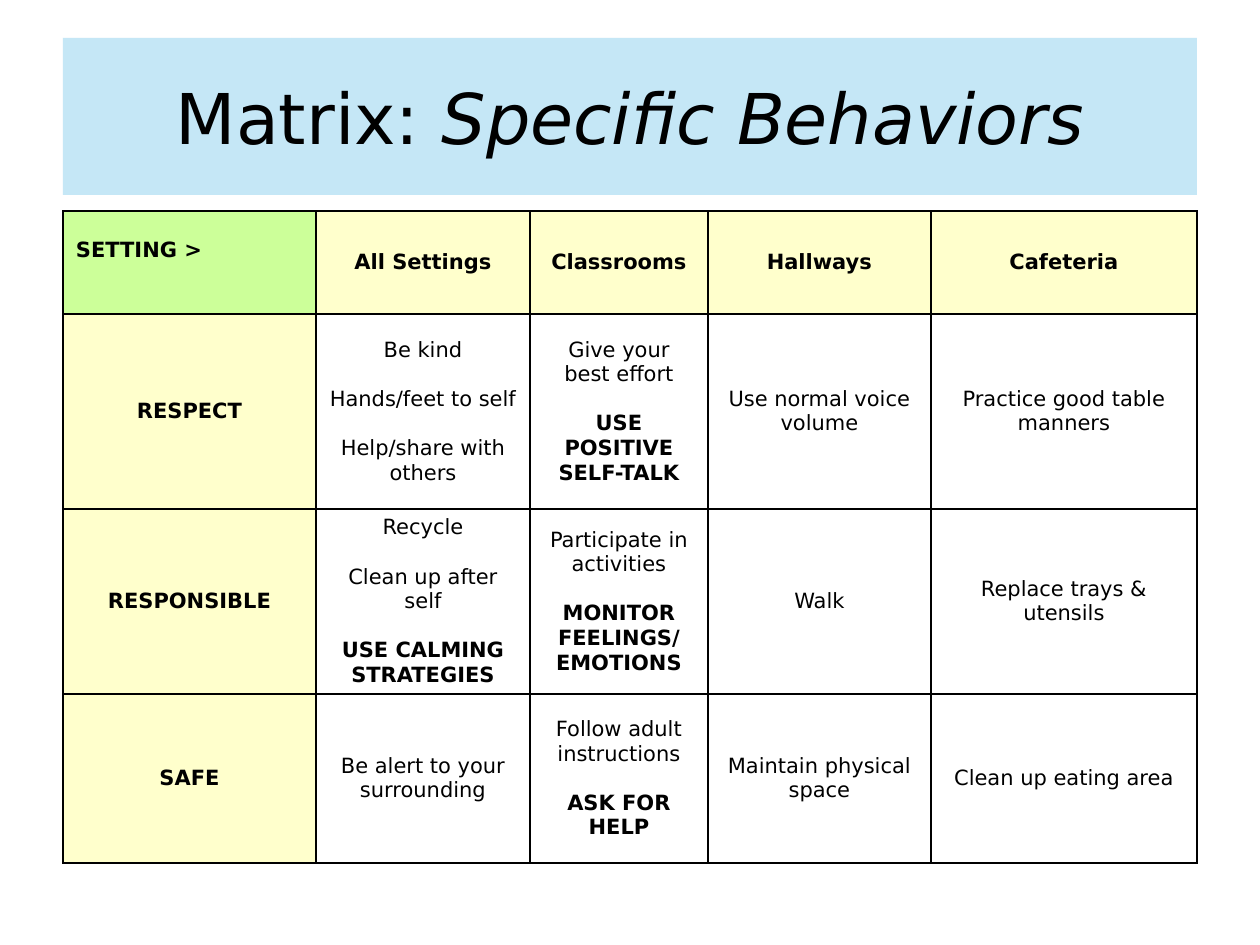
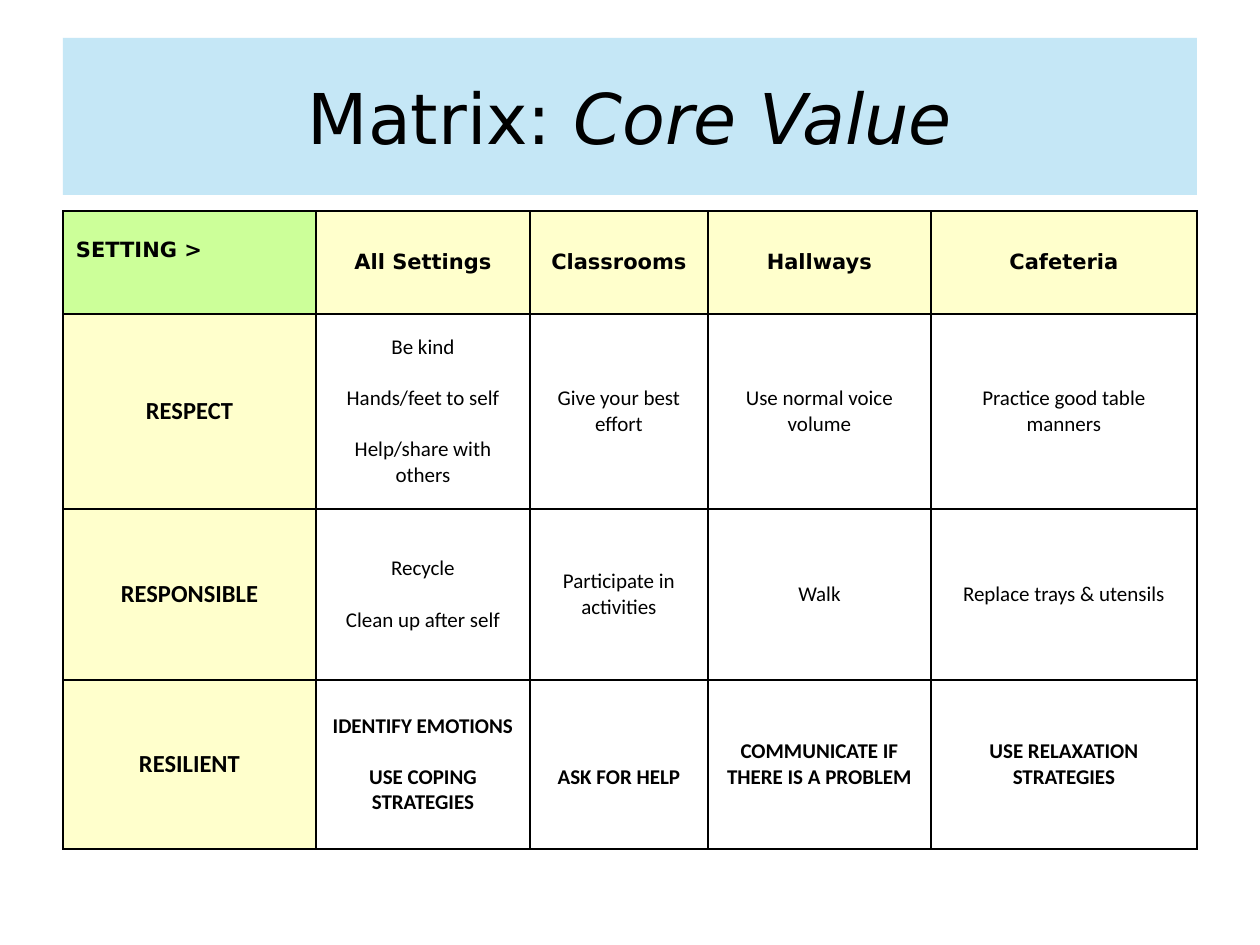
import pptx
import pptx.dml.color
import pptx.enum.shapes
import pptx.enum.text
import pptx.oxml
import pptx.oxml.ns
import pptx.util
from lxml import etree

EMU_PER_PX = 914400 / 126
LEFT, WIDTH = 63, 1134
TITLE_TOP, TITLE_HEIGHT = 38, 157
TABLE_TOP = 211
COLUMN_WIDTHS = [253, 214, 178, 223, 266]
MARGIN_X, MARGIN_Y = 13, 6

BLACK, WHITE = "000000", "FFFFFF"
SKY, GREEN, CREAM = "A9DCF2", "CCFF99", "FFFFCC"
SKY_ALPHA = 67
BASE_FONT = "DejaVu Sans"
SETTINGS = ["SETTING >", "All Settings", "Classrooms", "Hallways", "Cafeteria"]
ALIGN = pptx.enum.text.PP_ALIGN
MIDDLE = pptx.enum.text.MSO_ANCHOR.MIDDLE

BEHAVIORS = [
    ["RESPECT",
     ["Be kind", "Hands/feet to self", "Help/share with others"],
     ["Give your best effort", "USE POSITIVE SELF-TALK"],
     ["Use normal voice volume"],
     ["Practice good table manners"]],
    ["RESPONSIBLE",
     ["Recycle", "Clean up after self", "USE CALMING STRATEGIES"],
     ["Participate in activities", "MONITOR FEELINGS/ EMOTIONS"],
     ["Walk"],
     ["Replace trays & utensils"]],
    ["SAFE",
     ["Be alert to your surrounding"],
     ["Follow adult instructions", "ASK FOR HELP"],
     ["Maintain physical space"],
     ["Clean up eating area"]],
]

CORE_VALUES = [
    ["RESPECT",
     ["Be kind", "Hands/feet to self", "Help/share with others"],
     ["Give your best effort"],
     ["Use normal voice volume"],
     ["Practice good table manners"]],
    ["RESPONSIBLE",
     ["Recycle", "Clean up after self"],
     ["Participate in activities"],
     ["Walk"],
     ["Replace trays & utensils"]],
    ["RESILIENT",
     ["IDENTIFY EMOTIONS", "USE COPING STRATEGIES"],
     ["ASK FOR HELP"],
     ["COMMUNICATE IF THERE IS A PROBLEM"],
     ["USE RELAXATION STRATEGIES"]],
]


def px(length):
    return pptx.util.Emu(round(length * EMU_PER_PX))


def color(value):
    return pptx.dml.color.RGBColor.from_string(value)


def fill_solid(target, value):
    target.fill.solid()
    target.fill.fore_color.rgb = color(value)


def add_run(paragraph, text, size, font_name=BASE_FONT, bold=False, italic=False):
    run = paragraph.add_run()
    run.text = text
    run.font.name = font_name
    run.font.size = pptx.util.Pt(size)
    run.font.bold = bold
    run.font.italic = italic
    run.font.color.rgb = color(BLACK)


def set_margins(target):
    target.margin_left = target.margin_right = px(MARGIN_X)
    target.margin_top = target.margin_bottom = px(MARGIN_Y)
    target.vertical_anchor = MIDDLE


def add_title(slide, topic):
    band = slide.shapes.add_shape(
        pptx.enum.shapes.MSO_SHAPE.RECTANGLE,
        px(LEFT), px(TITLE_TOP), px(WIDTH), px(TITLE_HEIGHT))
    band.shadow.inherit = False
    band.line.fill.background()
    fill_solid(band, SKY)
    sky = band.fill._xPr.find(".//" + pptx.oxml.ns.qn("a:srgbClr"))
    alpha = etree.SubElement(sky, pptx.oxml.ns.qn("a:alpha"))
    alpha.set("val", str(SKY_ALPHA * 1000))
    frame = band.text_frame
    frame.word_wrap = True
    set_margins(frame)
    paragraph = frame.paragraphs[0]
    paragraph.alignment = ALIGN.CENTER
    add_run(paragraph, "Matrix: ", 40)
    add_run(paragraph, topic, 40, italic=True)


def add_borders(cell):
    properties = cell._tc.get_or_add_tcPr()
    for index, side in enumerate(["lnL", "lnR", "lnT", "lnB"]):
        border = pptx.oxml.parse_xml(
            f'<a:{side} {pptx.oxml.ns.nsdecls("a")} w="12700"><a:solidFill>'
            f'<a:srgbClr val="{BLACK}"/></a:solidFill></a:{side}>')
        properties.insert(index, border)


def fill_cell(cell, lines, fill, size, font_name, bold=False, gap=14):
    fill_solid(cell, fill)
    add_borders(cell)
    set_margins(cell)
    for index, line in enumerate(lines):
        if index == 0:
            paragraph = cell.text_frame.paragraphs[0]
        else:
            paragraph = cell.text_frame.add_paragraph()
            paragraph.space_before = pptx.util.Pt(gap)
        paragraph.alignment = ALIGN.CENTER
        add_run(paragraph, line, size, font_name, bold or line.isupper())


def add_matrix(slide, values, row_heights, font_name, value_size, gap):
    frame = slide.shapes.add_table(
        len(row_heights), len(COLUMN_WIDTHS),
        px(LEFT), px(TABLE_TOP), px(WIDTH), px(sum(row_heights)))
    table = frame.table
    table.first_row = False
    table.horz_banding = False
    for column, width in zip(table.columns, COLUMN_WIDTHS):
        column.width = px(width)
    for row, height in zip(table.rows, row_heights):
        row.height = px(height)

    for column, setting in enumerate(SETTINGS):
        fill = CREAM if column else GREEN
        fill_cell(table.cell(0, column), [setting], fill, 12, BASE_FONT, bold=True)
    corner = table.cell(0, 0)
    corner.text_frame.paragraphs[0].alignment = ALIGN.LEFT
    corner.margin_bottom = px(MARGIN_Y + 25)

    for row, (value, *behaviors) in enumerate(values, 1):
        fill_cell(table.cell(row, 0), [value], CREAM, value_size, font_name)
        for column, lines in enumerate(behaviors, 1):
            fill_cell(table.cell(row, column), lines, WHITE, 12, font_name, gap=gap)
    return table


def add_matrix_slide(presentation, topic, *matrix):
    slide = presentation.slides.add_slide(presentation.slide_layouts[6])
    table = add_matrix(slide, *matrix)
    add_title(slide, topic)
    return table


def main():
    presentation = pptx.Presentation()
    presentation.slide_width = px(1260)
    presentation.slide_height = px(945)
    add_matrix_slide(presentation, "Specific Behaviors", BEHAVIORS,
                     [103, 195, 185, 169], BASE_FONT, 12, 14)
    core_table = add_matrix_slide(presentation, "Core Value", CORE_VALUES,
                                  [103, 195, 171, 169], "Calibri", 14, 14.6)
    core_table.cell(3, 2).margin_top = px(MARGIN_Y + 25)
    presentation.save("out.pptx")


if __name__ == "__main__":
    main()
